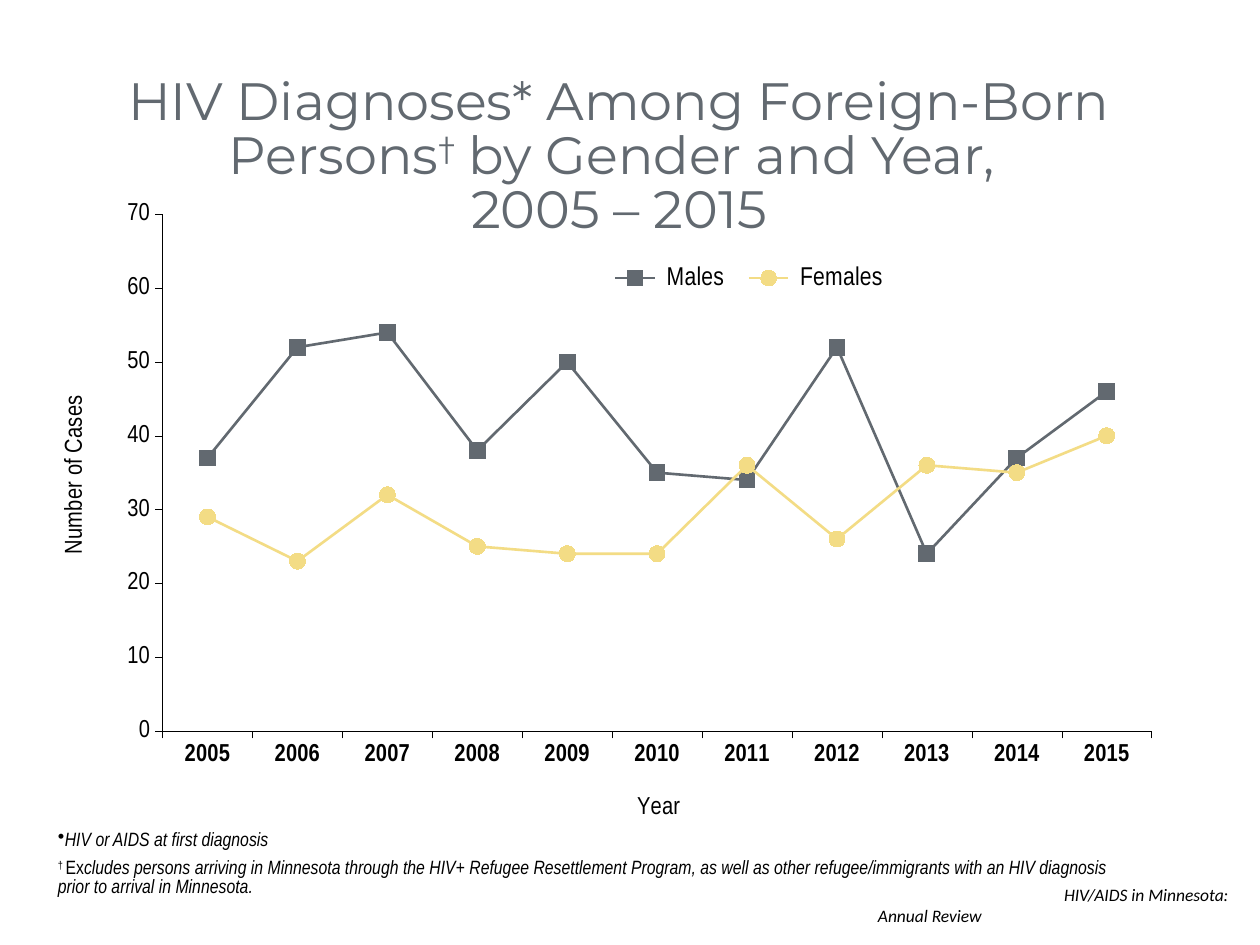
from dataclasses import dataclass

from lxml.etree import SubElement
from pptx import Presentation
from pptx.chart.data import CategoryChartData
from pptx.dml.color import RGBColor
from pptx.enum.chart import XL_CHART_TYPE as CT, XL_LEGEND_POSITION as LP
from pptx.enum.chart import XL_MARKER_STYLE as MS, XL_TICK_MARK as TM
from pptx.enum.text import MSO_ANCHOR as ANCHOR, PP_ALIGN as ALIGN
from pptx.oxml.ns import qn
from pptx.util import Emu, Pt


@dataclass(frozen=True)
class Theme:
    """Colours, fonts and type sizes of the slide."""
    slate: str = "626970"
    gold: str = "F3DC85"
    black: str = "000000"
    heading: str = "Montserrat"
    label: str = "Arial Narrow"
    footer: str = "Calibri"
    chart: str = "Times New Roman"
    title_size: float = 30
    chart_size: float = 17
    legend_size: float = 14.7
    axis_size: float = 14
    note_size: float = 11
    footer_size: float = 10


T = Theme()
YEARS = [str(y) for y in range(2005, 2016)]
SERIES = [
    (" Males", [37, 52, 54, 38, 50, 35, 34, 52, 24, 37, 46], T.slate, MS.SQUARE),
    (" Females", [29, 23, 32, 25, 24, 24, 36, 26, 36, 35, 40], T.gold, MS.CIRCLE),
]


def px(n):
    """Turn whole pixels into EMU."""
    return Emu(round(n * 914400 / 126))


def assign(obj, **values):
    """Set attributes from format values."""
    for name, value in values.items():
        setattr(obj, name, value)


def style(font, size, name, color=T.black, **values):
    """Give a font its size, face, colour and flags."""
    assign(font, size=Pt(size), name=name, **values)
    font.color.rgb = RGBColor.from_string(color)


def add_text(slide, box, paragraphs, font, fmt=None, inset=(0, 0), anchor=ANCHOR.TOP):
    """Add a text box from paragraphs of (text, superscript, flags) runs."""
    tf = slide.shapes.add_textbox(*map(px, box)).text_frame
    x, y = map(px, inset)
    assign(tf, word_wrap=True, vertical_anchor=anchor,
           margin_left=x, margin_right=x, margin_top=y, margin_bottom=y)
    for i, runs in enumerate(paragraphs):
        p = tf.add_paragraph() if i else tf.paragraphs[0]
        assign(p, **(fmt or {}))
        for text, raised, flags in runs:
            r = p.add_run()
            r.text = text
            style(r.font, *font, **flags)
            if raised:
                r.font._element.set("baseline", "30000")
    return tf


def place(parent, index, x, y, w=None, h=None, inner=False):
    """Fix a chart part at fractions of the chart frame."""
    for old in parent.findall(qn("c:layout")):
        parent.remove(old)
    layout = SubElement(parent, qn("c:layout"))
    parent.insert(index, layout)
    manual = SubElement(layout, qn("c:manualLayout"))
    values = {"layoutTarget": "inner" if inner else None, "xMode": "edge",
              "yMode": "edge", "x": x, "y": y, "w": w, "h": h}
    for tag, value in values.items():
        if value is not None:
            SubElement(manual, qn(f"c:{tag}")).set("val", str(value))


def style_axis(axis, title, x, y, bold):
    """Format an axis with its line, labels and placed title."""
    assign(axis, has_major_gridlines=False, major_tick_mark=TM.OUTSIDE,
           minor_tick_mark=TM.NONE)
    axis.format.line.width = Pt(0.25)
    axis.format.line.color.rgb = RGBColor.from_string(T.black)
    style(axis.tick_labels.font, T.axis_size, T.label, bold=bold)
    p = axis.axis_title.text_frame.paragraphs[0]
    r = p.add_run()
    r.text = title
    style(r.font, T.axis_size, T.label, bold=False)
    place(axis.axis_title._element, 1, x, y)


def style_series(s, color, marker):
    """Format one line and its markers."""
    rgb = RGBColor.from_string(color)
    s.smooth = False
    s.format.line.width = Pt(1.5)
    assign(s.marker, style=marker, size=9)
    s.marker.format.fill.solid()
    s.marker.format.fill.fore_color.rgb = rgb
    for line in (s.format.line, s.marker.format.line):
        line.color.rgb = rgb


def add_line_chart(slide, box):
    """Add the chart of cases by gender and year."""
    data = CategoryChartData()
    data.categories = YEARS
    for name, values, *_ in SERIES:
        data.add_series(name, values)
    chart = slide.shapes.add_chart(CT.LINE_MARKERS, *map(px, box), data).chart
    assign(chart, has_title=False, has_legend=True)
    style(chart.font, T.chart_size, T.chart, bold=True)
    chart.plots[0].vary_by_categories = False
    place(chart._chartSpace.chart.plotArea, 0, 0.106, 0.034, 0.892, 0.779, True)
    assign(chart.legend, position=LP.RIGHT, include_in_layout=False)
    style(chart.legend.font, T.legend_size, T.label, bold=False)
    place(chart.legend._element, 1, 0.5, 0.1, 0.27, 0.06)
    assign(chart.value_axis, minimum_scale=0, maximum_scale=70, major_unit=10)
    style_axis(chart.category_axis, "Year", 0.53, 0.9, True)
    style_axis(chart.value_axis, "Number of Cases", 0.01, 0.3, False)
    for s, (_, _, color, marker) in zip(chart.plots[0].series, SERIES):
        style_series(s, color, marker)


def add_bullet(p):
    """Put a bullet directly before the paragraph text."""
    ppr = p._p.get_or_add_pPr()
    ppr.set("marL", "0")
    ppr.set("indent", "0")
    SubElement(ppr, qn("a:buChar")).set("char", "•")


def main():
    """Build and save the slide."""
    prs = Presentation()
    assign(prs, slide_width=px(1260), slide_height=px(945))
    slide = prs.slides.add_slide(prs.slide_layouts[6])
    add_line_chart(slide, (45, 192, 1109, 663))
    add_text(slide, (10, 84, 1218, 149),
             [[("HIV Diagnoses* Among Foreign-Born Persons", False, {}),
               ("†", True, {}), (" by Gender and Year, ", False, {})],
              [("2005 – 2015", False, {})]],
             (T.title_size, T.heading, T.slate),
             {"alignment": ALIGN.CENTER, "line_spacing": 0.85}, (13, 6), ANCHOR.MIDDLE)
    slanted = {"italic": True}
    notes = add_text(slide, (45, 819, 1094, 93),
                     [[("HIV or AIDS at first diagnosis", False, slanted)],
                      [("† ", True, {}), ("Ex", False, {}),
                       ("cludes persons arriving in Minnesota through the HIV+ Refugee "
                        "Resettlement Program, as well as other refugee/immigrants with an "
                        "HIV diagnosis prior to arrival in Minnesota.", False, slanted)]],
                     (T.note_size, T.label),
                     {"line_spacing": 0.8, "space_before": Pt(5.5)}, (13, 13))
    add_bullet(notes.paragraphs[0])
    footer = add_text(slide, (878, 884, 400, 51),
                      [[("HIV/AIDS in Minnesota: Annual Review", False, slanted)]],
                      (T.footer_size, T.footer))
    footer.paragraphs[0]._p.get_or_add_pPr().set("indent", str(px(186)))
    prs.save("out.pptx")


if __name__ == "__main__":
    main()
